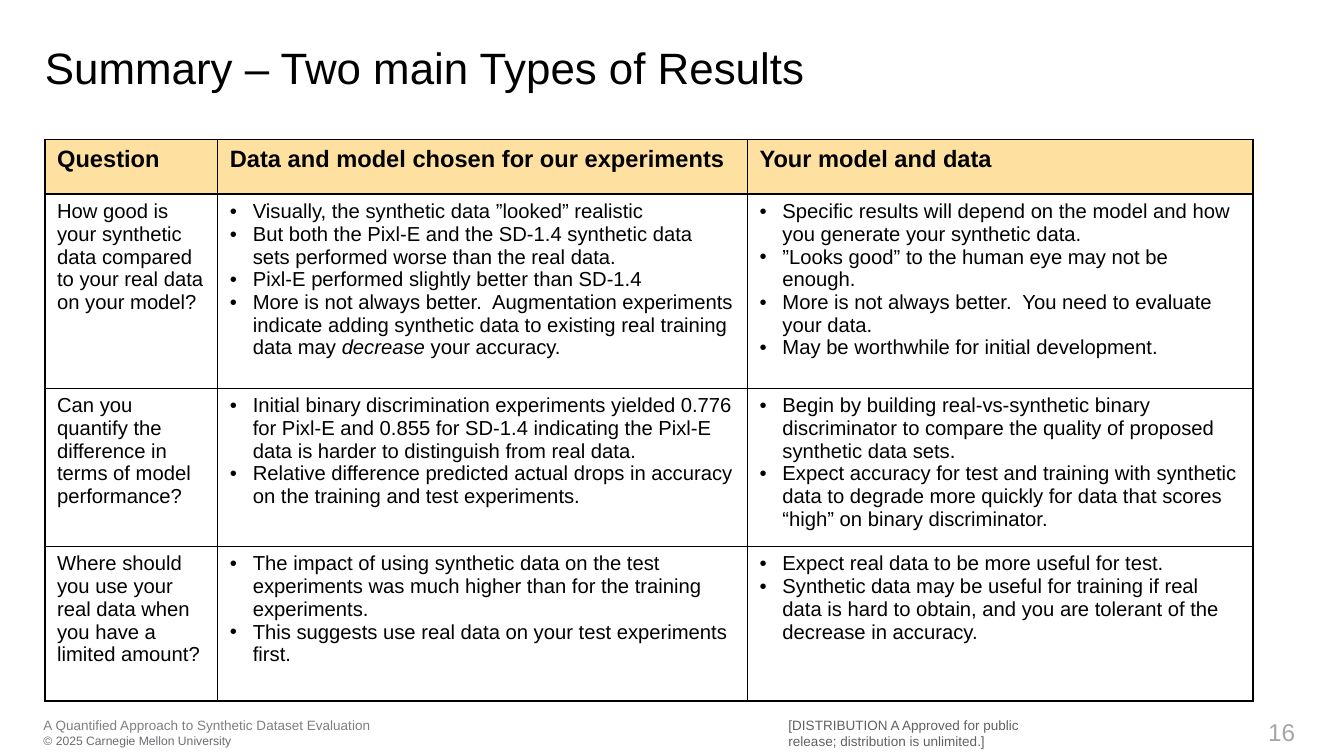
"""Build the summary slide: a title, a table of results and a footer."""
from dataclasses import dataclass

import pptx
import pptx.dml.color
import pptx.enum.text
import pptx.oxml
import pptx.oxml.ns
import pptx.util

Cm = pptx.util.Cm
Align = pptx.enum.text.PP_ALIGN


@dataclass(frozen=True)
class Theme:
    """Font, colours and type sizes of the slide."""
    font: str = "Arial"
    ink: str = "000000"
    head: str = "FEE1A1"
    foot: str = "7F7F7F"
    rights: str = "6C6D71"
    notice: str = "616161"
    page: str = "A6A6A6"
    title_size: float = 26
    head_size: float = 14
    body_size: float = 12
    page_size: float = 14.4
    foot_size: float = 8
    rights_size: float = 7.2


@dataclass(frozen=True)
class Style:
    """Look of a run of text."""
    size: float
    color: str
    bold: bool = False


@dataclass(frozen=True)
class Label:
    """Text box with one style for each line, lengths in centimetres."""
    left: float
    top: float
    width: float
    height: float
    text: str
    styles: tuple[Style, ...]
    align: Align = Align.LEFT


@dataclass(frozen=True)
class Topic:
    """Table row with a question and two lists of findings."""
    height: float
    question: str
    ours: tuple[str, ...]
    yours: tuple[str, ...]


THEME = Theme()
HEAD = Style(THEME.head_size, THEME.ink, True)
BODY = Style(THEME.body_size, THEME.ink)
FOOT_TOP = 14.99

LABELS = (
    Label(0.94, 0.84, 23.9, 2.08, "Summary – Two main Types of Results",
          (Style(THEME.title_size, THEME.ink),)),
    Label(0.91, FOOT_TOP, 11.43, 0.66,
          "A Quantified Approach to Synthetic Dataset Evaluation\v"
          "© 2025 Carnegie Mellon University",
          (Style(THEME.foot_size, THEME.foot), Style(THEME.rights_size, THEME.rights))),
    Label(16.48, FOOT_TOP, 5.82, 0.64,
          "[DISTRIBUTION A Approved for public release; distribution is unlimited.]",
          (Style(THEME.foot_size, THEME.notice),)),
    Label(25.37, FOOT_TOP, 1.7, 0.64, "16",
          (Style(THEME.page_size, THEME.page),), Align.RIGHT),
)

WIDTHS = (3.61, 11.07, 10.57)
HEAD_TALL = 1.14
HEADS = ("Question", "Data and model chosen for our experiments", "Your model and data")
TOPICS = (
    Topic(4.06, "How good is your synthetic data compared to your real data on your model?",
          ("Visually, the synthetic data ”looked” realistic",
           "But both the Pixl-E and the SD-1.4 synthetic data sets performed worse "
           "than the real data.",
           "Pixl-E performed slightly better than SD-1.4",
           "More is not always better.  Augmentation experiments indicate adding synthetic "
           "data to existing real training data may *decrease* your accuracy."),
          ("Specific results will depend on the model and how you generate your synthetic data.",
           "”Looks good” to the human eye may not be enough.",
           "More is not always better.  You need to evaluate your data.",
           "May be worthwhile for initial development.")),
    Topic(3.19, "Can you quantify the difference in terms of model performance?",
          ("Initial binary discrimination experiments yielded 0.776 for Pixl-E and 0.855 "
           "for SD-1.4 indicating the Pixl-E data is harder to distinguish from real data.",
           "Relative difference predicted actual drops in accuracy on the training and "
           "test experiments."),
          ("Begin by building real-vs-synthetic binary discriminator to compare the quality "
           "of proposed synthetic data sets.",
           "Expect accuracy for test and training with synthetic data to degrade more "
           "quickly for data that scores “high” on binary discriminator.")),
    Topic(3.23, "Where should you use your real data when you have a limited amount?",
          ("The impact of using synthetic data on the test experiments was much higher "
           "than for the training experiments.",
           "This suggests use real data on your test experiments first."),
          ("Expect real data to be more useful for test.",
           "Synthetic data may be useful for training if real data is hard to obtain, "
           "and you are tolerant of the decrease in accuracy.")),
)


def rgb(color: str) -> pptx.dml.color.RGBColor:
    """Turn a hex string into a colour."""
    return pptx.dml.color.RGBColor.from_string(color)


def dress(run, style: Style) -> None:
    """Give a run its font, size, colour and weight."""
    font = run.font
    font.name = THEME.font
    font.size = pptx.util.Pt(style.size)
    font.bold = style.bold
    font.color.rgb = rgb(style.color)


def add_label(slide, label: Label) -> None:
    """Draw a text box without insets."""
    box = slide.shapes.add_textbox(
        *(Cm(n) for n in (label.left, label.top, label.width, label.height)))
    frame = box.text_frame
    frame.word_wrap = True
    frame.margin_left = frame.margin_right = frame.margin_top = frame.margin_bottom = 0
    frame.text = label.text.split("\v")[0]
    para = frame.paragraphs[0]
    para.text = label.text
    para.alignment = label.align
    for run, style in zip(para.runs, label.styles):
        dress(run, style)


def add_bullet(para) -> None:
    """Give a paragraph a round bullet and a hanging indent."""
    props = para._p.get_or_add_pPr()
    hang = Cm(0.48)
    props.set("marL", str(hang))
    props.set("indent", str(-hang))
    space = pptx.oxml.ns.nsdecls("a")
    for tag in (f'<a:buFont {space} typeface="{THEME.font}"/>',
                f'<a:buChar {space} char="•"/>'):
        props.append(pptx.oxml.parse_xml(tag))


def add_border(cell) -> None:
    """Draw a thin line on all four sides of a cell."""
    props = cell._tc.get_or_add_tcPr()
    for place, side in enumerate("LRTB"):
        props.insert(place, pptx.oxml.parse_xml(
            f'<a:ln{side} {pptx.oxml.ns.nsdecls("a")} w="{pptx.util.Pt(1)}">'
            f'<a:solidFill><a:srgbClr val="{THEME.ink}"/></a:solidFill></a:ln{side}>'))


def fill_cell(cell, lines: tuple[str, ...], style: Style, listed: bool) -> None:
    """Write the lines of a cell, with starred words in italics."""
    frame = cell.text_frame
    frame.text = "\n".join(line.split("*")[0] for line in lines)
    for para, line in zip(frame.paragraphs, lines):
        if listed:
            add_bullet(para)
        for part in line.split("*")[1:]:
            para.add_run().text = part
        for place, run in enumerate(para.runs):
            dress(run, style)
            run.font.italic = place % 2 == 1
    if style is HEAD:
        cell.fill.solid()
        cell.fill.fore_color.rgb = rgb(THEME.head)
    else:
        cell.fill.background()
    add_border(cell)


def add_grid(slide) -> None:
    """Draw the table of questions and findings."""
    talls = (HEAD_TALL, *(topic.height for topic in TOPICS))
    grid = slide.shapes.add_table(len(talls), len(WIDTHS), Cm(0.94), Cm(2.92),
                                  Cm(sum(WIDTHS)), Cm(sum(talls))).table
    grid.first_row = grid.horz_banding = False
    for column, width in zip(grid.columns, WIDTHS):
        column.width = Cm(width)
    for row, tall in zip(grid.rows, talls):
        row.height = Cm(tall)
    for col, head in enumerate(HEADS):
        fill_cell(grid.cell(0, col), (head,), HEAD, False)
    for row, topic in enumerate(TOPICS, 1):
        for col, lines in enumerate(((topic.question,), topic.ours, topic.yours)):
            fill_cell(grid.cell(row, col), lines, BODY, col > 0)


def main() -> None:
    """Build and save the slide."""
    deck = pptx.Presentation()
    deck.slide_width, deck.slide_height = Cm(28.09), Cm(15.8)
    slide = deck.slides.add_slide(deck.slide_layouts[6])
    for label in LABELS:
        add_label(slide, label)
    add_grid(slide)
    deck.save("out.pptx")


if __name__ == "__main__":
    main()
